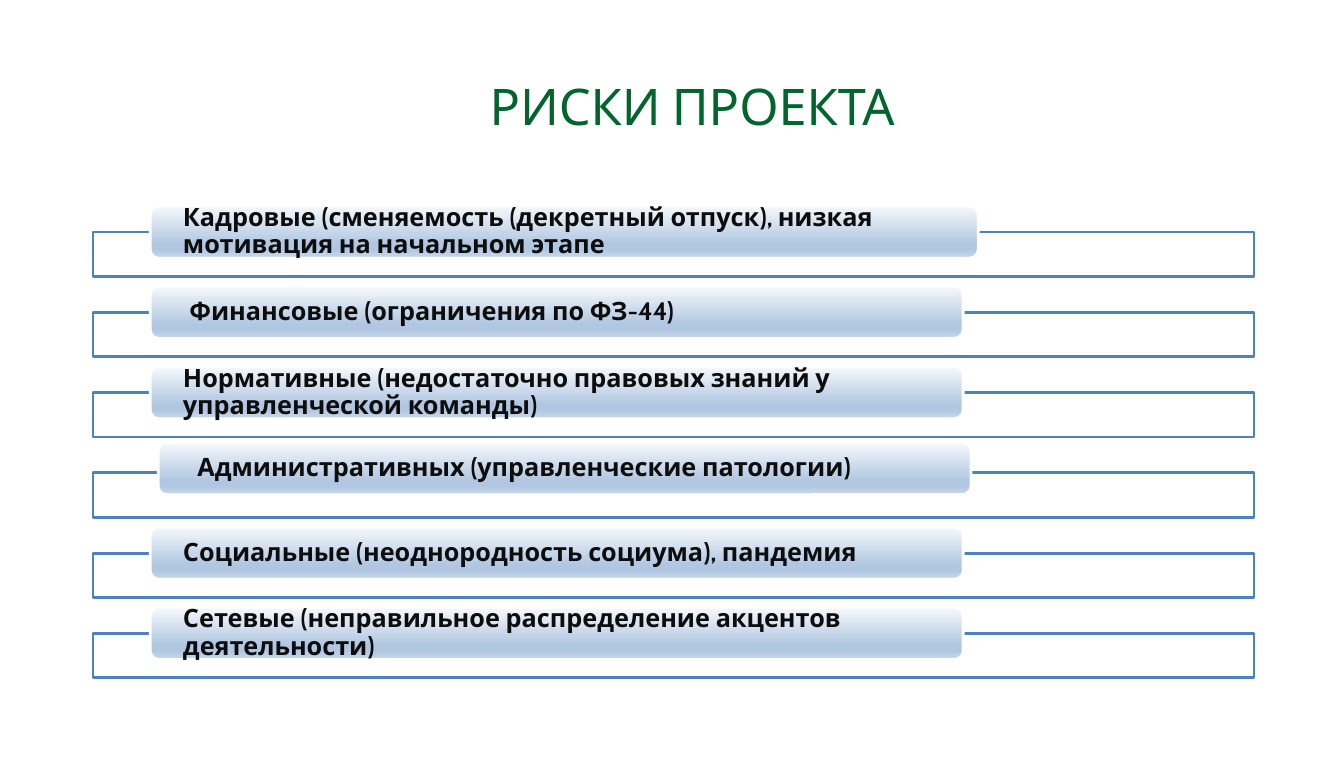
from copy import deepcopy
from lxml.etree import SubElement
from pptx import Presentation
from pptx.dml.color import RGBColor
from pptx.enum.shapes import MSO_SHAPE as Shape
from pptx.enum.text import MSO_ANCHOR as Anchor, PP_ALIGN as Align
from pptx.oxml.ns import qn
from pptx.util import Cm, Pt

TITLE = "РИСКИ ПРОЕКТА"
# text, text indent, shift right, shift down, width
RISKS = [
    ("Кадровые (сменяемость (декретный отпуск), низкая мотивация на начальном этапе", 0, 0, 0, 20.83),
    ("Финансовые (ограничения по ФЗ-44)", 0.16, 0, 0, 20.45),
    ("Нормативные (недостаточно правовых знаний у управленческой команды)", 0, 0, 0, 20.45),
    ("Административных (управленческие патологии)", 0.16, 0.2, -0.11, 20.45),
    ("Социальные (неоднородность социума), пандемия", 0, 0, 0, 20.45),
    ("Сетевые (неправильное распределение акцентов деятельности)", 0, 0, 0, 20.45),
]

FONT = "Cabin"
GREEN = RGBColor(0x00, 0x64, 0x2D)
BLUE = RGBColor(0x4F, 0x81, 0xBD)
WHITE = RGBColor(0xFF, 0xFF, 0xFF)
INK = RGBColor(0x0D, 0x0D, 0x0D)
PALE = RGBColor(0xF6, 0xF9, 0xFC)
MID = RGBColor(0xB0, 0xC6, 0xE1)
SOFT = RGBColor(0xCA, 0xD9, 0xEB)
STOPS = [(0, PALE), (0.74, MID), (0.83, MID), (1, SOFT)]

TOP, PITCH, RISE = 5.84, 2.02, 0.66


def write(shape, text, size, color, bold, align, left=0, right=0):
    frame = shape.text_frame
    frame.text = text
    frame.word_wrap = True
    frame.vertical_anchor = Anchor.MIDDLE
    frame.margin_left, frame.margin_right = Cm(left), Cm(right)
    frame.margin_top = frame.margin_bottom = 0
    par = frame.paragraphs[0]
    par.alignment = align
    par.line_spacing = 0.9
    par.space_before = Pt(0)
    font = par.runs[0].font
    font.name, font.size, font.bold = FONT, Pt(size), bold
    font.color.rgb = color


def add_box(slide, kind, left, top, width, height, edge):
    box = slide.shapes.add_shape(kind, Cm(left), Cm(top), Cm(width), Cm(height))
    box.shadow.inherit = False
    box.line.color.rgb = edge
    box.line.width = Pt(2)
    return box


def add_frame(slide, top):
    box = add_box(slide, Shape.RECTANGLE, 2.34, top, 29.21, 1.12, BLUE)
    box.fill.solid()
    box.fill.fore_color.rgb = WHITE
    tint = box.element.spPr.find(qn("a:solidFill"))[0]
    SubElement(tint, qn("a:alpha")).set("val", "90000")


def add_pill(slide, left, top, width):
    pill = add_box(slide, Shape.ROUNDED_RECTANGLE, left, top, width, 1.32, WHITE)
    fill = pill.fill
    fill.gradient()
    fill.gradient_angle = 270
    stops = pill.element.spPr.find(qn("a:gradFill")).find(qn("a:gsLst"))
    while len(stops) < len(STOPS):
        stops.append(deepcopy(stops[0]))
    for stop, (place, color) in zip(fill.gradient_stops, STOPS):
        stop.position = place
        stop.color.rgb = color
    return pill


def main():
    deck = Presentation()
    deck.slide_width, deck.slide_height = Cm(33.81), Cm(19.05)
    slide = deck.slides.add_slide(deck.slide_layouts[5])
    for holder in list(slide.placeholders):
        if holder != slide.shapes.title:
            holder.element.getparent().remove(holder.element)

    title = slide.shapes.title
    title.left, title.top, title.width, title.height = Cm(0.51), Cm(2.05), Cm(33.81), Cm(1.4)
    write(title, TITLE, 36, GREEN, False, Align.CENTER)

    for row, (text, indent, right, down, width) in enumerate(RISKS):
        top = TOP + row * PITCH
        add_frame(slide, top)
        pill = add_pill(slide, 3.78 + right, top - RISE + down, width)
        write(pill, text, 18, INK, True, Align.LEFT, 0.76 + indent, 0.76)

    deck.save("out.pptx")


if __name__ == "__main__":
    main()
